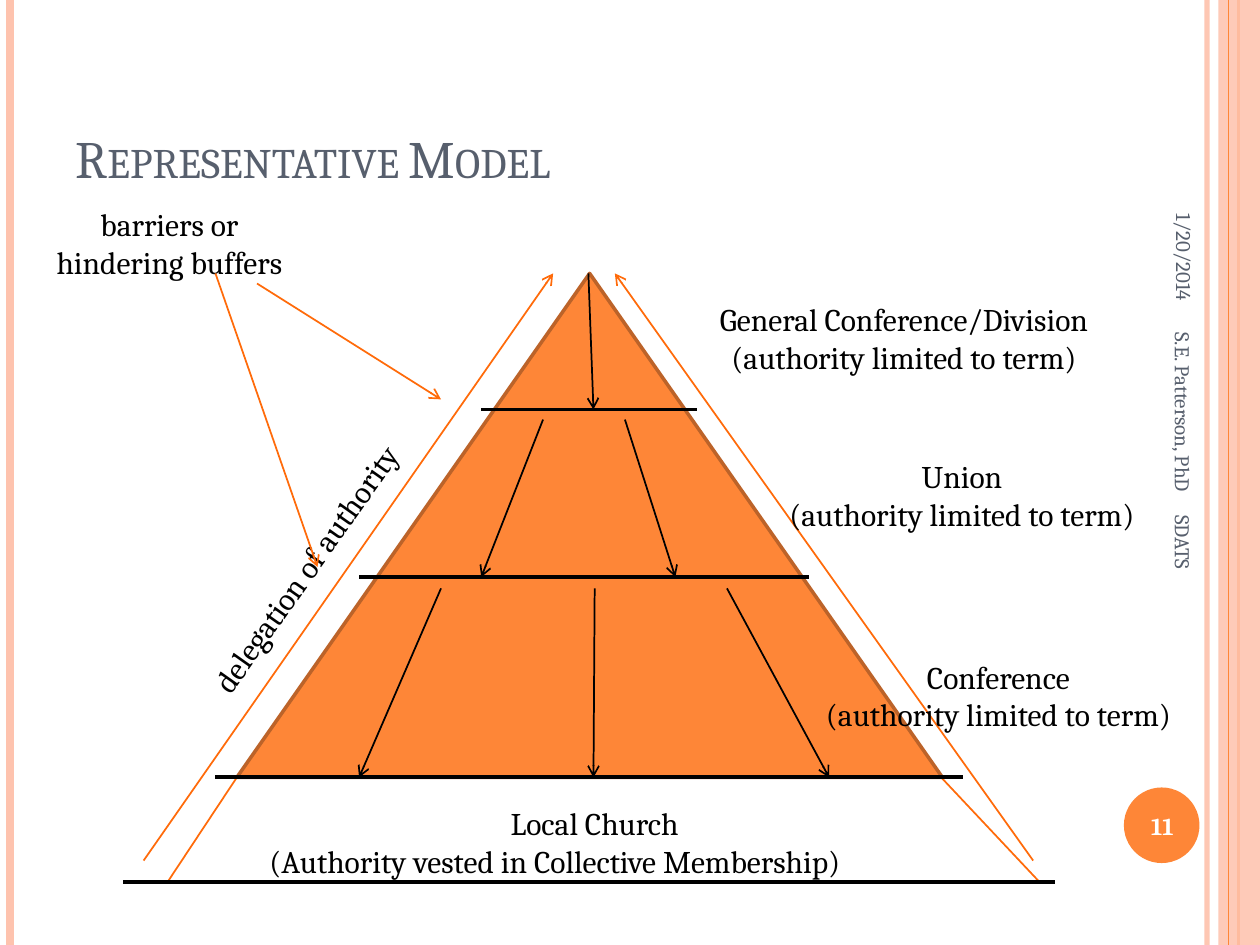
from lxml.etree import SubElement
from pptx import Presentation
from pptx.dml.color import RGBColor
from pptx.enum.shapes import MSO_CONNECTOR, MSO_SHAPE
from pptx.enum.text import MSO_ANCHOR as ANCHOR, MSO_AUTO_SIZE as AUTO_SIZE, PP_ALIGN as ALIGN
from pptx.oxml.ns import qn
from pptx.util import Inches, Pt

COLORS = {
    "black": "000000",
    "white": "FFFFFF",
    "slate": "575F6D",
    "orange": "FE8637",
    "bright": "FF6B0A",
    "brown": "BC6329",
    "peach": "FEC3AE",
}
FONT = "Cambria"
TERM = "(authority limited to term)"


def add_line(start, end, color, width, arrow=False):
    line = slide.shapes.add_connector(
        MSO_CONNECTOR.STRAIGHT, *[Inches(value) for value in (*start, *end)])
    line.line.color.rgb = RGBColor.from_string(COLORS[color])
    line.line.width = Pt(width)
    properties = line._element.spPr
    if arrow:
        SubElement(properties.find(qn("a:ln")), qn("a:tailEnd"), type="arrow")
    SubElement(properties, qn("a:effectLst"))
    return line


def add_text(box, lines, size=18, color="black", anchor=ANCHOR.TOP, wrap=True, rotation=0):
    """Add a text box; lines holds one (text, alignment) pair per paragraph."""
    shape = slide.shapes.add_textbox(*[Inches(value) for value in box])
    shape.rotation = rotation
    frame = shape.text_frame
    frame.word_wrap = wrap
    frame.auto_size = AUTO_SIZE.NONE
    frame.vertical_anchor = anchor
    for index, (text, alignment) in enumerate(lines):
        paragraph = frame.add_paragraph() if index else frame.paragraphs[0]
        paragraph.alignment = alignment
        run = paragraph.add_run()
        run.text = text
        run.font.name = FONT
        run.font.size = Pt(size)
        run.font.color.rgb = RGBColor.from_string(COLORS[color])
    return shape


presentation = Presentation()
presentation.slide_width = Inches(10)
presentation.slide_height = Inches(7.5)
slide = presentation.slides.add_slide(presentation.slide_layouts[6])

# Side stripes, page badge and pyramid
stripes = {}
for x, color, width in [(9.58, "peach", 3), (0.08, "peach", 4.5), (9.83, "orange", 1.5)]:
    stripes[x] = add_line((x, 0), (x, 7.5), color, width)
shapes = {}
for name, preset, box, color in [
    ("band", MSO_SHAPE.RECTANGLE, (9.67, 0, 0.33, 7.5), "peach"),
    ("badge", MSO_SHAPE.OVAL, (8.92, 6.25, 0.6, 0.6), "orange"),
    ("pyramid", MSO_SHAPE.ISOSCELES_TRIANGLE, (1.88, 2.17, 5.6, 4), "orange"),
]:
    shape = slide.shapes.add_shape(preset, *[Inches(value) for value in box])
    shape.shadow.inherit = False
    shape.fill.solid()
    shape.fill.fore_color.rgb = RGBColor.from_string(COLORS[color])
    shape.line.fill.background()
    shapes[name] = shape
shapes["pyramid"].line.color.rgb = RGBColor.from_string(COLORS["brown"])
shapes["pyramid"].line.width = Pt(2)
for shape, opacity in [(stripes[9.58], 93), (shapes["band"], 87)]:
    color_element = next(shape._element.spPr.iter(qn("a:srgbClr")))
    SubElement(color_element, qn("a:alpha"), val=str(opacity * 1000))
add_line((9.75, 0), (9.75, 7.5), "orange", 0.75)

title = add_text((0.5, 0.3, 8.17, 1.25), [("Representative Model", ALIGN.LEFT)],
                 30, "slate", ANCHOR.BOTTOM)
title.text_frame.paragraphs[0].runs[0].font._element.set("cap", "small")

# Pyramid feet and outer authority arrows
for start, end, arrow in [
    ((1.88, 6.17), (1.33, 7), False),
    ((7.47, 6.17), (8.25, 7), False),
    ((1.14, 6.83), (4.39, 2.17), True),
    ((8.2, 6.83), (4.88, 2.17), True),
]:
    add_line(start, end, "bright", 1, arrow)

# Labels of the levels
for box, heading, detail, alignment, wrap in [
    ((6.26, 5.17, 3.33, 0.71), "Conference", TERM, ALIGN.CENTER, True),
    ((5.45, 2.33, 3.45, 0.71), "General Conference/Division", TERM, ALIGN.CENTER, False),
    ((5.93, 3.58, 3.41, 0.71), "Union", TERM, ALIGN.CENTER, True),
    ((2.04, 6.33, 5.36, 0.71), "Local Church",
     "(Authority vested in Collective Membership)", ALIGN.LEFT, True),
]:
    add_text(box, [(heading, ALIGN.CENTER), (detail, alignment)], wrap=wrap)
add_text((0.33, 1.58, 2.03, 0.71), [("barriers or hindering buffers", ALIGN.CENTER)])
add_text((1.15, 4.3, 2.56, 0.39), [("delegation of authority", ALIGN.LEFT)],
         wrap=False, rotation=305.3)

# Lines between levels
for left, right, y in [(3.82, 5.53, 3.25), (2.85, 6.42, 4.58),
                       (1.71, 7.64, 6.17), (0.98, 8.37, 7)]:
    add_line((left, y), (right, y), "black", 2.25)

# Arrows from each level down to the next
for top, bottom, columns in [
    (2.17, 3.25, [(4.67, 4.71)]),
    (3.33, 4.58, [(4.31, 3.82), (4.96, 5.36)]),
    (4.67, 6.17, [(4.72, 4.71), (3.5, 2.85), (5.77, 6.58)]),
]:
    for start_x, end_x in columns:
        add_line((start_x, top), (end_x, bottom), "black", 1, arrow=True)

# Arrows from the barriers label
for start, end in [((1.71, 2.17), (2.52, 4.5)), ((2.04, 2.25), (3.5, 3.17))]:
    add_line(start, end, "bright", 1, arrow=True)

# Date, page number and footer
add_text((8.3, 1.18, 2.2, 0.42), [("1/20/2014", ALIGN.RIGHT)],
         12, "slate", ANCHOR.MIDDLE, rotation=90)
number = add_text((8.89, 6.27, 0.67, 0.57), [("11", ALIGN.CENTER)],
                  14, "white", ANCHOR.MIDDLE)
number.text_frame.paragraphs[0].runs[0].font.bold = True
footer = add_text((7.64, 4.09, 3.5, 0.4), [("S.E. Patterson, PhD\tSDATS", ALIGN.LEFT)],
                  12, "slate", ANCHOR.MIDDLE, rotation=90)
tab_stops = SubElement(footer.text_frame.paragraphs[0]._p.get_or_add_pPr(), qn("a:tabLst"))
SubElement(tab_stops, qn("a:tab"), pos=str(Inches(1.45)), algn="l")

presentation.save("out.pptx")
